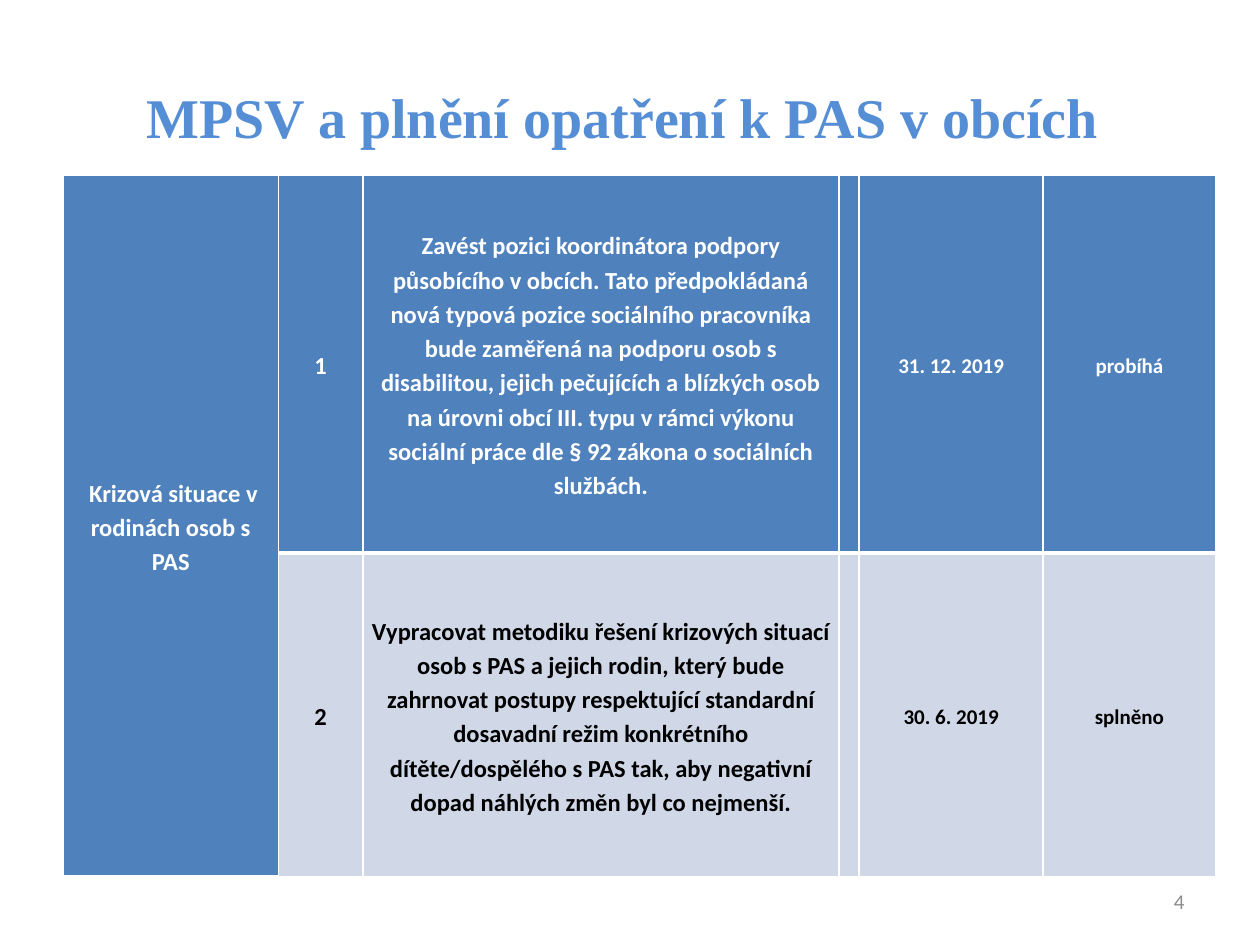
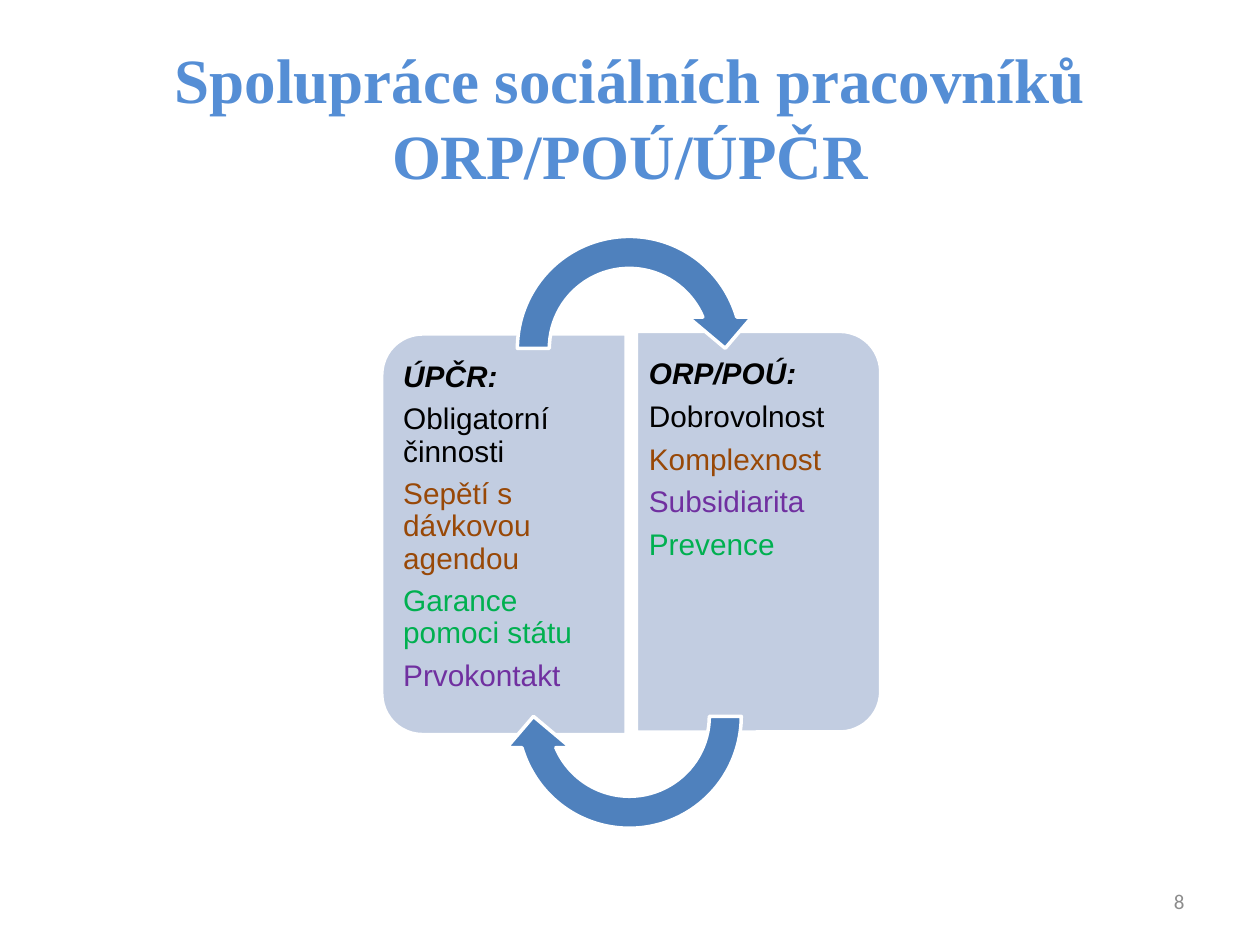
import pptx
import pptx.util
import pptx.dml.color
import pptx.enum.shapes
import pptx.enum.text
import lxml.etree
from dataclasses import dataclass

Inches = pptx.util.Inches
Pt = pptx.util.Pt
Align = pptx.enum.text.PP_ALIGN
Anchor = pptx.enum.text.MSO_ANCHOR
Preset = pptx.enum.shapes.MSO_SHAPE


@dataclass(frozen=True)
class Theme:
    title_font: str = "Times New Roman"
    table_font: str = "Calibri"
    panel_font: str = "Arial"
    title: str = "558ED5"
    accent: str = "4F81BD"
    row: str = "D0D8E8"
    panel: str = "C2CDE1"
    white: str = "FFFFFF"
    black: str = "000000"
    grey: str = "8C8C8C"
    brown: str = "984807"
    green: str = "00B050"
    purple: str = "7030A0"
    panel_size: int = 17
    text_size: int = 14
    small_size: int = 12


theme = Theme()


def rgb(color):
    return pptx.dml.color.RGBColor.from_string(color)


def write(para, text, font, size, color, bold=False, italic=False,
          align=Align.LEFT, spacing=None, after=None):
    """Add one formatted run to a paragraph and set the paragraph's layout."""
    para.alignment = align
    if spacing is not None:
        para.line_spacing = spacing
    if after is not None:
        para.space_after = Pt(after)
    span = para.add_run()
    span.text = text
    span.font.name = font
    span.font.size = Pt(size)
    span.font.bold = bold
    span.font.italic = italic
    span.font.color.rgb = rgb(color)


deck = pptx.Presentation()
deck.slide_width, deck.slide_height = Inches(10), Inches(7.5)

# Title and page number of each slide
headings = [
    ("MPSV a plnění opatření k PAS v obcích ", 32, "4"),
    ("Spolupráce sociálních pracovníků ORP/POÚ/ÚPČR", 36, "8"),
]
pages = []
for heading, size, number in headings:
    page = deck.slides.add_slide(deck.slide_layouts.get_by_name("Title Only"))
    title = page.shapes.title
    title.left, title.top = Inches(0.5), Inches(0.3)
    title.width, title.height = Inches(9), Inches(1.25)
    title.text_frame.vertical_anchor = Anchor.MIDDLE
    write(title.text_frame.paragraphs[0], heading, theme.title_font, size,
          theme.title, bold=True, align=Align.CENTER)
    box = page.shapes.add_textbox(Inches(7.17), Inches(6.95), Inches(2.33), Inches(0.4))
    box.text_frame.word_wrap = True
    box.text_frame.vertical_anchor = Anchor.MIDDLE
    write(box.text_frame.paragraphs[0], number, theme.table_font,
          theme.small_size, theme.grey, align=Align.RIGHT)
    pages.append(page)
measures_page, cooperation_page = pages

# Table of measures
column_widths = [1.71, 0.67, 3.78, 0.16, 1.46, 1.37]
row_heights = [3, 2.57]
measures = [
    [" Krizová situace v rodinách osob s PAS", "1",
     "Zavést pozici koordinátora podpory působícího v obcích. Tato předpokládaná "
     "nová typová pozice sociálního pracovníka bude zaměřená na podporu osob s "
     "disabilitou, jejich pečujících a blízkých osob na úrovni obcí III. typu v rámci "
     "výkonu sociální práce dle § 92 zákona o sociálních službách.",
     "", "31. 12. 2019", "probíhá"],
    ["", "2",
     "Vypracovat metodiku řešení krizových situací osob s PAS a jejich rodin, který "
     "bude zahrnovat postupy respektující standardní dosavadní režim konkrétního "
     "dítěte/dospělého s PAS tak, aby negativní dopad náhlých změn byl co nejmenší.",
     "", "30. 6. 2019", "splněno"],
]
row_styles = [(theme.accent, theme.white, 3, 12), (theme.row, theme.black, 1, 0)]
first_date_column = 4
table = measures_page.shapes.add_table(
    len(measures), len(column_widths), Inches(0.5), Inches(1.39),
    Inches(sum(column_widths)), Inches(sum(row_heights))).table
for column, width in zip(table.columns, column_widths):
    column.width = Inches(width)
for row, height in zip(table.rows, row_heights):
    row.height = Inches(height)
table.cell(0, 0).merge(table.cell(1, 0))

namespace = "http://schemas.openxmlformats.org/drawingml/2006/main"
for row_index, (texts, style) in enumerate(zip(measures, row_styles)):
    fill, ink, bottom_width, measure_gap = style
    for column_index, text in enumerate(texts):
        cell = table.cell(row_index, column_index)
        cell.vertical_anchor = Anchor.MIDDLE
        cell.margin_left = cell.margin_right = Inches(0.05)
        cell.margin_top = cell.margin_bottom = 0
        properties = cell._tc.get_or_add_tcPr()
        for side, width in zip("LRTB", (1, 1, 1, bottom_width)):
            line = lxml.etree.SubElement(
                properties, f"{{{namespace}}}ln{side}", w=str(Pt(width)))
            solid = lxml.etree.SubElement(line, f"{{{namespace}}}solidFill")
            lxml.etree.SubElement(solid, f"{{{namespace}}}srgbClr", val=theme.white)
        cell.fill.solid()
        cell.fill.fore_color.rgb = rgb(fill)
        if text:
            size = theme.small_size if column_index >= first_date_column else theme.text_size
            write(cell.text_frame.paragraphs[0], text, theme.table_font, size, ink,
                  bold=True, align=Align.CENTER, spacing=1.15,
                  after=measure_gap if column_index == 2 else 0)

# Two panels facing each other, joined by circular arrows
panels = [
    # panel left, top, rotation; text left, top, left and right inset; lines
    (2.41, 3.27, 270, 3.13, 2.75, 0.07, 0.11, [
        ("ÚPČR:", theme.black),
        ("Obligatorní činnosti", theme.black),
        ("Sepětí s dávkovou agendou", theme.brown),
        ("Garance pomoci státu", theme.green),
        ("Prvokontakt", theme.purple)]),
    (4.43, 3.25, 90, 5.04, 2.73, 0.11, 0.07, [
        ("ORP/POÚ:", theme.black),
        ("Dobrovolnost", theme.black),
        ("Komplexnost", theme.brown),
        ("Subsidiarita", theme.purple),
        ("Prevence", theme.green)]),
]
outlines = [(Preset.ROUND_2_SAME_RECTANGLE, left, top, 3.18, 1.94, turn, theme.panel)
            for left, top, turn, *rest in panels]
outlines += [(Preset.CIRCULAR_ARROW, 3.98, top, 2.03, 2.03, turn, theme.accent)
             for top, turn in ((1.75, 0), (4.67, 180))]
for preset, left, top, width, height, turn, fill in outlines:
    shape = cooperation_page.shapes.add_shape(
        preset, Inches(left), Inches(top), Inches(width), Inches(height))
    shape.rotation = turn
    shape.shadow.inherit = False
    shape.fill.solid()
    shape.fill.fore_color.rgb = rgb(fill)
    shape.line.color.rgb = rgb(theme.white)
    shape.line.width = Pt(2)

for *placement, left, top, inset_left, inset_right, lines in panels:
    box = cooperation_page.shapes.add_textbox(
        Inches(left), Inches(top), Inches(1.85), Inches(2.99))
    frame = box.text_frame
    frame.word_wrap = True
    frame.margin_left, frame.margin_right = Inches(inset_left), Inches(inset_right)
    frame.margin_top = frame.margin_bottom = Inches(0.12)
    for index, (text, color) in enumerate(lines):
        is_heading = index == 0
        para = frame.paragraphs[0] if is_heading else frame.add_paragraph()
        write(para, text, theme.panel_font, theme.panel_size, color,
              bold=is_heading, italic=is_heading, spacing=0.9, after=6)

deck.save("out.pptx")
